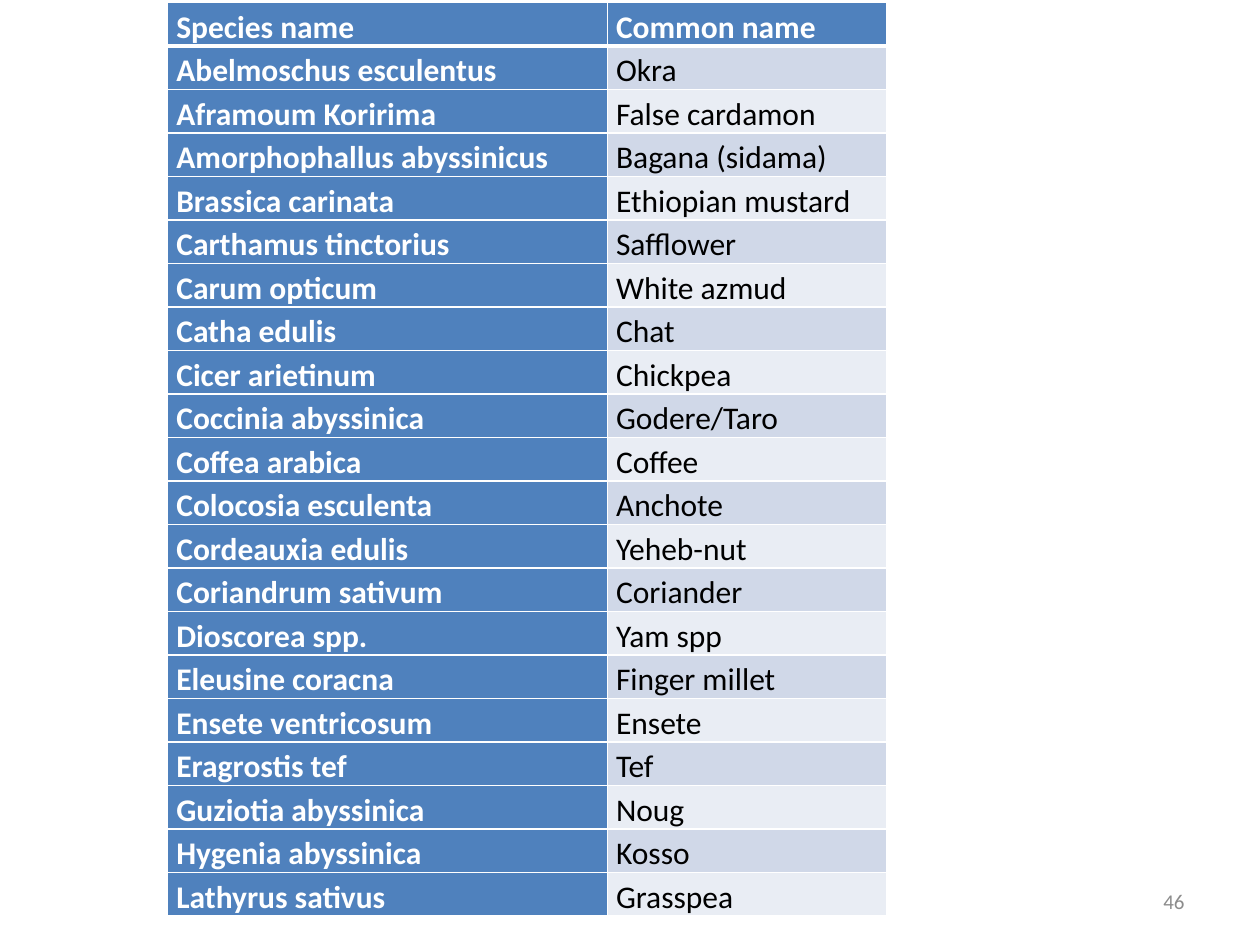
from dataclasses import dataclass

from lxml import etree
from pptx import Presentation
from pptx.dml.color import RGBColor
from pptx.enum.text import MSO_ANCHOR, PP_ALIGN
from pptx.oxml.ns import qn
from pptx.util import Inches, Pt

LEFT, RIGHT, JUSTIFY = PP_ALIGN.LEFT, PP_ALIGN.RIGHT, PP_ALIGN.JUSTIFY
MIDDLE = MSO_ANCHOR.MIDDLE

WHITE = RGBColor(0xFF, 0xFF, 0xFF)
BLACK = RGBColor(0x00, 0x00, 0x00)
GRAY = RGBColor(0x8C, 0x8C, 0x8C)
BLUE = RGBColor(0x4F, 0x81, 0xBD)
BANDS = (RGBColor(0xD0, 0xD8, 0xE8), RGBColor(0xE9, 0xED, 0xF4))

FONT = "Calibri"
THIN, THICK = Pt(1), Pt(3)
INSETS = {
    "margin_left": Inches(0.07),
    "margin_right": Inches(0.07),
    "margin_top": 0,
    "margin_bottom": 0,
}


@dataclass
class Plant:
    species: str
    common: str
    align: PP_ALIGN = JUSTIFY


HEADER = Plant("Species name", "Common name")
PLANTS = [
    Plant("Abelmoschus esculentus", "Okra"),
    Plant("Aframoum Koririma", "False cardamon"),
    Plant("Amorphophallus abyssinicus", "Bagana (sidama)"),
    Plant("Brassica carinata", "Ethiopian mustard"),
    Plant("Carthamus tinctorius", "Safflower", LEFT),
    Plant("Carum opticum", "White azmud", LEFT),
    Plant("Catha edulis", "Chat", LEFT),
    Plant("Cicer arietinum", "Chickpea"),
    Plant("Coccinia abyssinica", "Godere/Taro"),
    Plant("Coffea arabica", "Coffee"),
    Plant("Colocosia esculenta", "Anchote"),
    Plant("Cordeauxia edulis", "Yeheb-nut"),
    Plant("Coriandrum sativum", "Coriander"),
    Plant("Dioscorea spp.", "Yam spp"),
    Plant("Eleusine coracna", "Finger millet"),
    Plant("Ensete ventricosum", "Ensete"),
    Plant("Eragrostis tef", "Tef"),
    Plant("Guziotia abyssinica", "Noug", LEFT),
    Plant("Hygenia abyssinica", "Kosso"),
    Plant("Lathyrus sativus", "Grasspea"),
]


def write(frame, text: str, align: PP_ALIGN, **style) -> None:
    """Put one styled line of text into a text frame."""
    para = frame.paragraphs[0]
    para.alignment = align
    run = para.add_run()
    run.text = text
    run.font.color.rgb = style.pop("color")
    for name, value in {"name": FONT, **style}.items():
        setattr(run.font, name, value)


def border(cell, row: int) -> None:
    """Draw white cell edges, with a thick rule below the header."""
    props = cell._tc.get_or_add_tcPr()
    widths = {
        "a:lnL": THIN,
        "a:lnR": THIN,
        "a:lnT": THICK if row == 1 else THIN,
        "a:lnB": THICK if row == 0 else THIN,
    }
    for tag, width in widths.items():
        line = etree.SubElement(props, qn(tag), w=str(width))
        fill = etree.SubElement(line, qn("a:solidFill"))
        etree.SubElement(fill, qn("a:srgbClr"), val=str(WHITE))


def fill_cell(cell, row: int, text: str, align: PP_ALIGN, strong: bool) -> None:
    for name, value in INSETS.items():
        setattr(cell, name, value)
    border(cell, row)
    cell.fill.solid()
    cell.fill.fore_color.rgb = BLUE if strong else BANDS[(row - 1) % 2]
    write(cell.text_frame, text, align, size=Pt(18), bold=strong,
          color=WHITE if strong else BLACK)
    cell.text_frame.paragraphs[0].line_spacing = 1.15


def add_plants(slide) -> None:
    rows = [HEADER, *PLANTS]
    table = slide.shapes.add_table(
        len(rows), 2, Inches(1.33), Inches(0.02), Inches(5.71), Inches(7.25)
    ).table
    table.first_col = True
    for col, width in zip(table.columns, (3.49, 2.22)):
        col.width = Inches(width)
    for row, plant in enumerate(rows):
        fill_cell(table.cell(row, 0), row, plant.species, plant.align, True)
        fill_cell(table.cell(row, 1), row, plant.common, LEFT, row == 0)


def add_number(slide, text: str) -> None:
    box = slide.shapes.add_textbox(
        Inches(7.17), Inches(6.95), Inches(2.33), Inches(0.4))
    frame = box.text_frame
    frame.word_wrap = True
    frame.vertical_anchor = MIDDLE
    write(frame, text, RIGHT, size=Pt(12), color=GRAY)


def main() -> None:
    deck = Presentation()
    deck.slide_width, deck.slide_height = Inches(10), Inches(7.5)
    slide = deck.slides.add_slide(deck.slide_layouts[6])

    # Page number
    add_number(slide, "46")

    # Species table
    add_plants(slide)

    deck.save("out.pptx")


if __name__ == "__main__":
    main()
